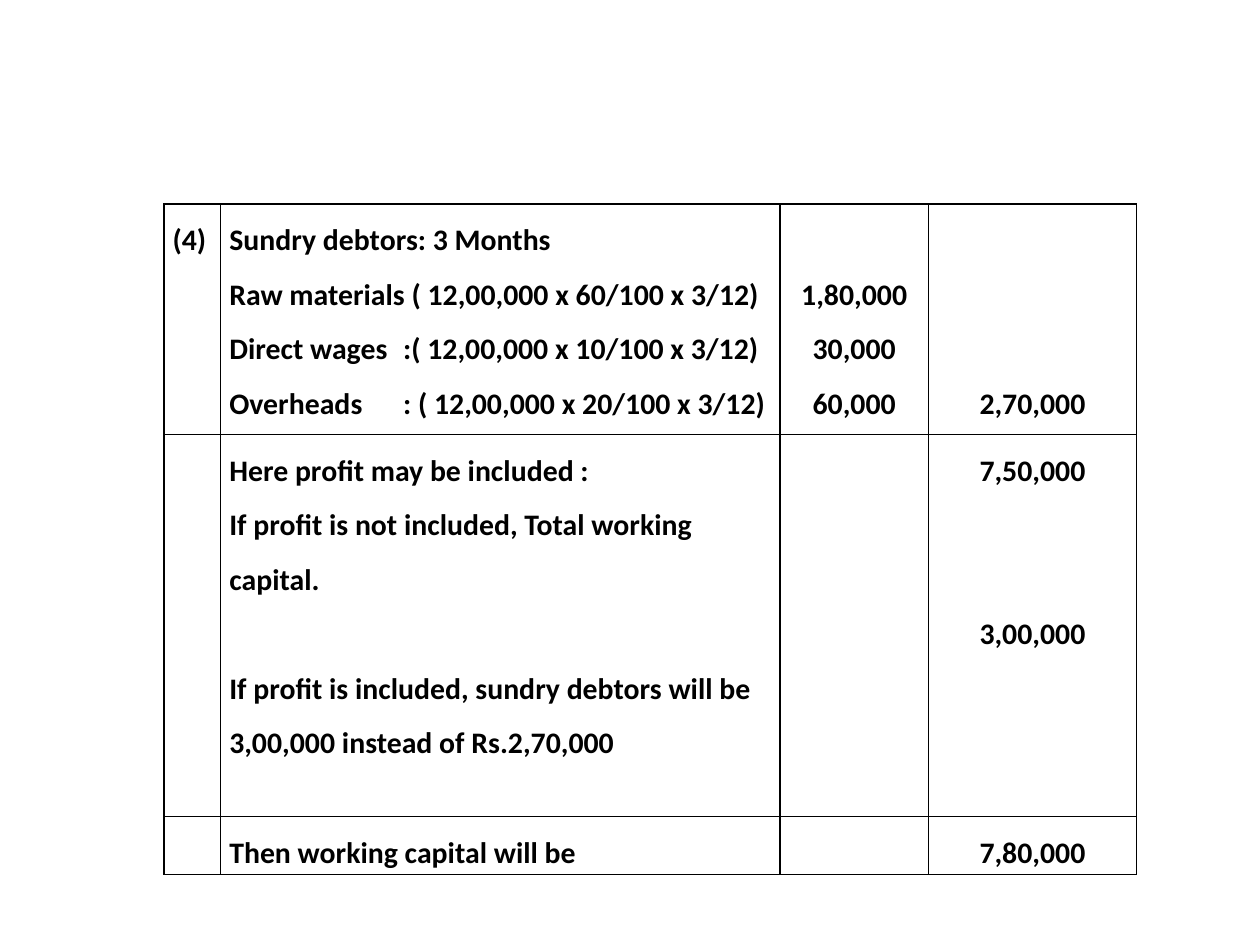
from lxml.etree import SubElement
from pptx import Presentation
from pptx.dml.color import RGBColor
from pptx.enum.text import MSO_ANCHOR, PP_ALIGN
from pptx.oxml.ns import qn
from pptx.util import Inches, Pt

BLACK = RGBColor(0, 0, 0)
FONT_SIZE = 17
LINE = 31.1  # height in points of one line at 1.5 spacing
COLUMNS = [0.45, 4.44, 1.18, 1.65]
ROWS = [1.83, 3.03, 0.46]
COLON_TAB = 1.38

# Each cell holds (blank lines above, text) pairs.
CELLS = [
    [
        [(0, "(4)")],
        [
            (0, "Sundry debtors: 3 Months"),
            (0, "Raw materials ( 12,00,000 x 60/100 x 3/12)"),
            (0, "Direct wages\t:( 12,00,000 x 10/100 x 3/12)"),
            (0, "Overheads\t: ( 12,00,000 x 20/100 x 3/12)"),
        ],
        [(0, "1,80,000"), (0, "30,000"), (0, "60,000")],
        [(0, "2,70,000")],
    ],
    [
        [],
        [
            (0, "Here profit may be included :"),
            (0, "If profit is not included, Total working capital."),
            (1, "If profit is included, sundry debtors will be "
                "3,00,000 instead of Rs.2,70,000"),
        ],
        [],
        [(0, "7,50,000"), (2, "3,00,000")],
    ],
    [
        [],
        [(0, "Then working capital will be")],
        [],
        [(0, "7,80,000")],
    ],
]


def add_borders(cell):
    tcPr = cell._tc.get_or_add_tcPr()
    for side in ("lnL", "lnR", "lnT", "lnB"):
        ln = SubElement(tcPr, qn(f"a:{side}"), w=str(Pt(1)))
        fill = SubElement(ln, qn("a:solidFill"))
        SubElement(fill, qn("a:srgbClr"), val=str(BLACK))


def add_tab_stop(p, position):
    tabs = SubElement(p._p.get_or_add_pPr(), qn("a:tabLst"))
    SubElement(tabs, qn("a:tab"), pos=str(Inches(position)), algn="l")


def format_cell(cell):
    add_borders(cell)
    cell.fill.background()
    cell.margin_left = cell.margin_right = Inches(0.07)
    cell.margin_top = cell.margin_bottom = 0


def write_lines(cell, lines, align):
    tf = cell.text_frame
    for i, (gap, text) in enumerate(lines):
        p = tf.paragraphs[0] if i == 0 else tf.add_paragraph()
        p.text = text
        p.alignment = align
        p.line_spacing = 1.5
        if gap:
            p.space_before = Pt(gap * LINE)
        if "\t" in text:
            add_tab_stop(p, COLON_TAB)
        p.font.name = "Calibri"
        p.font.size = Pt(FONT_SIZE)
        p.font.bold = True
        p.font.color.rgb = BLACK


def add_capital_table(s):
    table = s.shapes.add_table(
        len(ROWS), len(COLUMNS), Inches(1.3), Inches(1.62),
        Inches(sum(COLUMNS)), Inches(sum(ROWS))).table
    table.first_row = table.horz_banding = False
    for column, width in zip(table.columns, COLUMNS):
        column.width = Inches(width)
    for row, height, contents in zip(table.rows, ROWS, CELLS):
        row.height = Inches(height)
        for c, (cell, lines) in enumerate(zip(row.cells, contents)):
            format_cell(cell)
            write_lines(cell, lines,
                        PP_ALIGN.CENTER if c >= 2 else PP_ALIGN.LEFT)
    # Debtor amounts line up with the last lines of their descriptions.
    for c in (2, 3):
        cell = table.cell(0, c)
        cell.vertical_anchor = MSO_ANCHOR.BOTTOM
        cell.margin_bottom = Inches(0.1)


def main():
    prs = Presentation()
    prs.slide_width, prs.slide_height = Inches(10), Inches(7.5)
    s = prs.slides.add_slide(prs.slide_layouts[6])
    add_capital_table(s)
    prs.save("out.pptx")


if __name__ == "__main__":
    main()
